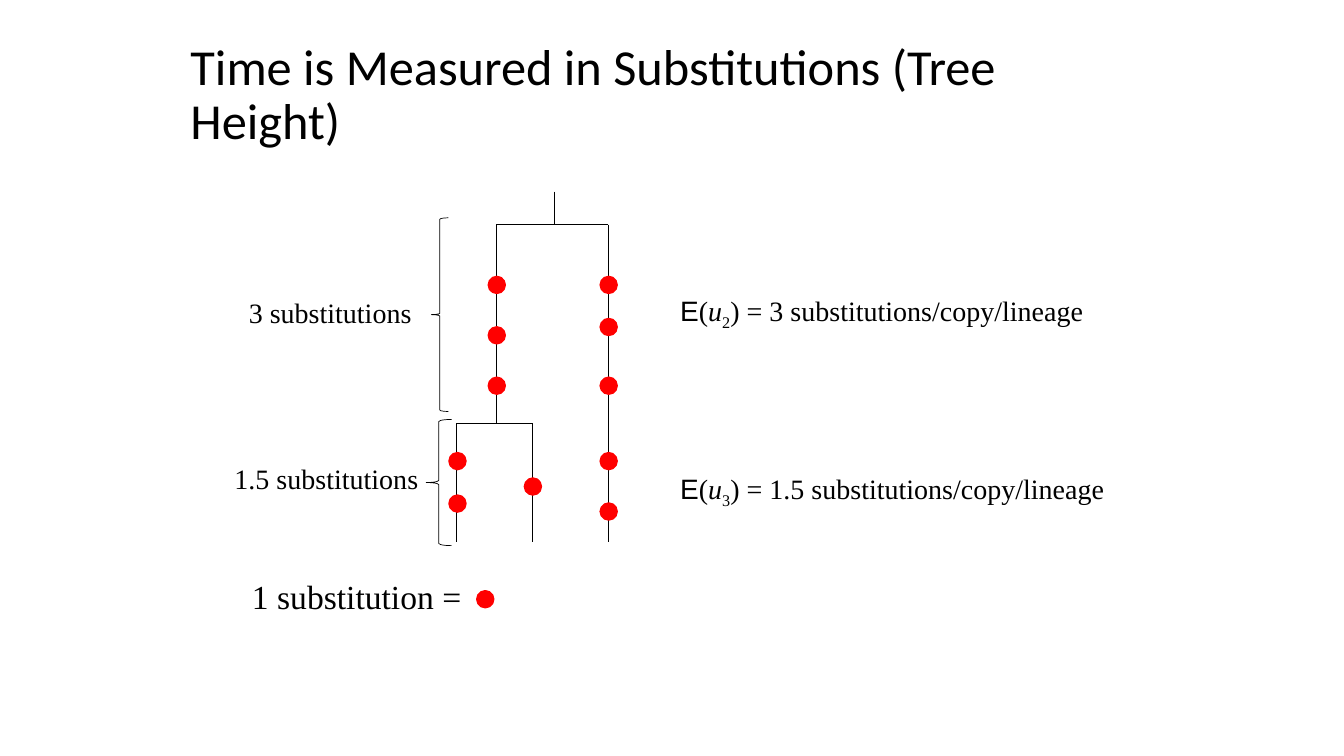
from lxml import etree
from pptx import Presentation
from pptx.dml.color import RGBColor
from pptx.enum.shapes import MSO_CONNECTOR, MSO_SHAPE
from pptx.enum.text import MSO_ANCHOR, MSO_AUTO_SIZE
from pptx.oxml.ns import qn
from pptx.util import Cm, Pt

BLACK = RGBColor(0x00, 0x00, 0x00)
RED = RGBColor(0xFF, 0x00, 0x00)
STRAIGHT = MSO_CONNECTOR.STRAIGHT
OVAL = MSO_SHAPE.OVAL
LEFT_BRACE = MSO_SHAPE.LEFT_BRACE
MIDDLE = MSO_ANCHOR.MIDDLE
FIT_TEXT = MSO_AUTO_SIZE.SHAPE_TO_FIT_TEXT


class TreeSlide:
    """Draws the parts of a gene tree on one slide, with lengths in centimetres."""

    serif = "Times New Roman"
    sans = "Arial"
    heading = "Calibri"
    dot_size = 0.43

    def __init__(self, slide):
        self.shapes = slide.shapes

    def title(self, text, left, top, width, height):
        frame = self.shapes.add_textbox(Cm(left), Cm(top), Cm(width), Cm(height)).text_frame
        frame.word_wrap = True
        frame.vertical_anchor = MIDDLE
        heading = frame.paragraphs[0]
        heading.text = text
        heading.line_spacing = 0.9
        self.style(heading.font, self.heading, 36)

    def style(self, font, name, size):
        font.name = name
        font.size = Pt(size)
        font.color.rgb = BLACK

    def label_frame(self, left, top, width, height):
        frame = self.shapes.add_textbox(Cm(left), Cm(top), Cm(width), Cm(height)).text_frame
        frame.word_wrap = False
        frame.auto_size = FIT_TEXT
        return frame

    def label(self, text, left, top, width, height, size=20):
        caption = self.label_frame(left, top, width, height).paragraphs[0]
        caption.text = text
        self.style(caption.font, self.serif, size)

    def expectations(self, rates, left, top, width, height, gap):
        frame = self.label_frame(left, top, width, height)
        for i, (copies, rate) in enumerate(rates):
            equation = frame.add_paragraph() if i else frame.paragraphs[0]
            if i:
                equation.space_before = Pt(gap)
            parts = ("E", "(", "u", copies, f") = {rate} substitutions/copy/lineage")
            for part in parts:
                run = equation.add_run()
                run.text = part
                self.style(run.font, self.sans if part == "E" else self.serif, 20)
                if part == "u":
                    run.font.italic = True
                if part == copies:
                    run.font._element.set("baseline", "-25000")

    def branch(self, x1, y1, x2, y2):
        line = self.shapes.add_connector(STRAIGHT, Cm(x1), Cm(y1), Cm(x2), Cm(y2))
        line.line.color.rgb = BLACK
        line.line.width = Pt(0.5)
        etree.SubElement(line._element.spPr, qn("a:effectLst"))

    def substitution(self, x, y):
        size = self.dot_size
        dot = self.shapes.add_shape(
            OVAL, Cm(x - size / 2), Cm(y - size / 2), Cm(size), Cm(size))
        dot.shadow.inherit = False
        dot.fill.solid()
        dot.fill.fore_color.rgb = RED
        dot.line.color.rgb = RED
        dot.line.width = Pt(1)

    def brace(self, left, top, width, height):
        brace = self.shapes.add_shape(LEFT_BRACE, Cm(left), Cm(top), Cm(width), Cm(height))
        brace.shadow.inherit = False
        brace.fill.background()
        brace.line.color.rgb = BLACK
        brace.line.width = Pt(0.5)


def main():
    deck = Presentation()
    deck.slide_width, deck.slide_height = Cm(33.87), Cm(19.05)
    tree = TreeSlide(deck.slides.add_slide(deck.slide_layouts[6]))

    tree.title("Time is Measured in Substitutions (Tree Height)", 4.55, 0.84, 24.71, 3.18)

    first_copy, second_copy, third_copy = 11.51, 13.41, 15.32
    ancestor, root = 12.5, 13.97
    root_top, old_split, new_split, present = 4.83, 5.66, 10.67, 13.67
    for ends in (
        (first_copy, new_split, first_copy, present),
        (second_copy, new_split, second_copy, present),
        (first_copy, new_split, second_copy, new_split),
        (ancestor, old_split, ancestor, new_split),
        (third_copy, old_split, third_copy, present),
        (ancestor, old_split, third_copy, old_split),
        (root, root_top, root, old_split),
    ):
        tree.branch(*ends)

    substitutions = {
        first_copy: (11.62, 12.69),
        second_copy: (12.26,),
        ancestor: (7.18, 8.45, 9.72),
        third_copy: (7.18, 8.24, 9.72, 11.62, 12.89),
    }
    for lineage, times in substitutions.items():
        for time in times:
            tree.substitution(lineage + 0.02, time)

    tree.brace(10.87, 5.49, 0.43, 4.88)
    tree.label("3 substitutions", 6.02, 7.32, 4.62, 1.12)
    tree.brace(10.74, 10.57, 0.64, 3.18)
    tree.label("1.5 substitutions", 5.66, 11.51, 5.18, 1.12)
    tree.expectations((("2", "3"), ("3", "1.5")), 16.89, 7.26, 11.23, 5.38, gap=100)

    tree.label("1 substitution =", 6.1, 14.38, 6.05, 1.3, size=24)
    tree.substitution(12.23, 15.1)

    deck.save("out.pptx")


if __name__ == "__main__":
    main()
